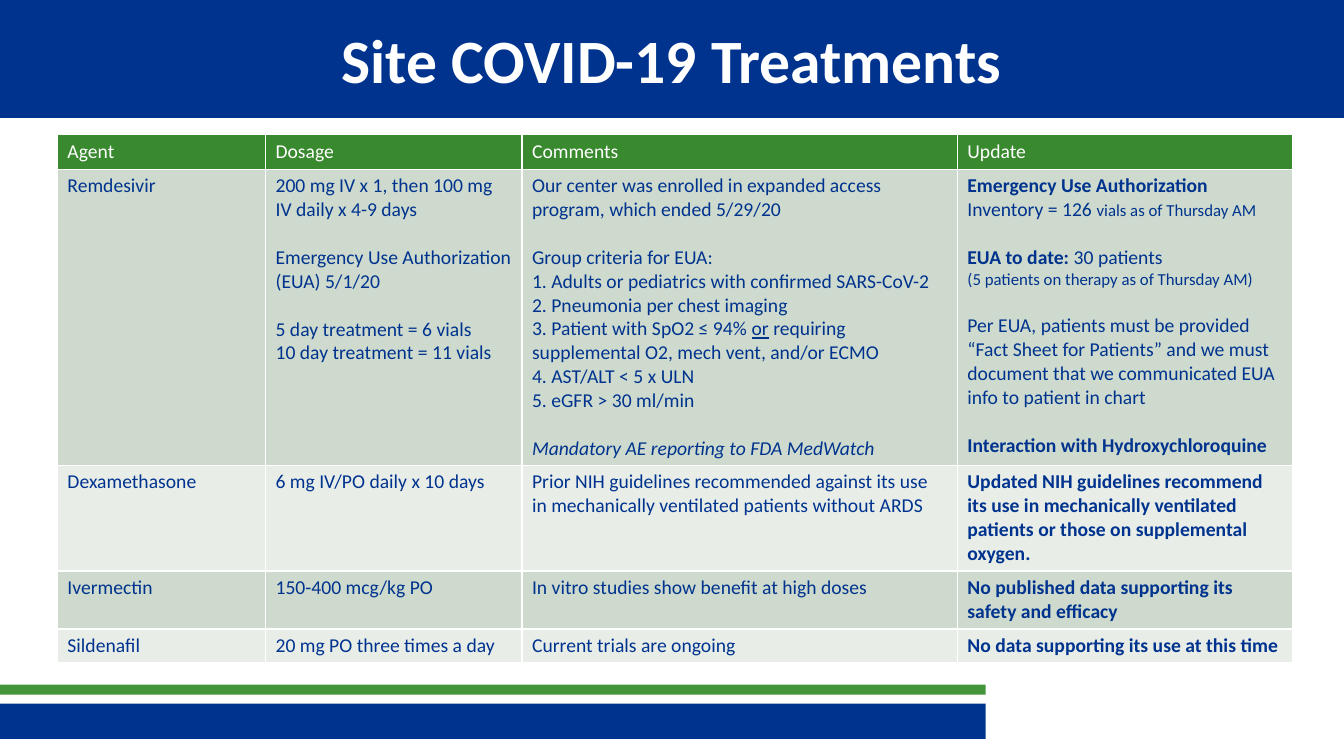
from dataclasses import dataclass

from lxml.etree import SubElement
from pptx import Presentation
from pptx.dml.color import RGBColor as Rgb
from pptx.enum.shapes import MSO_SHAPE as Shape
from pptx.enum.text import MSO_ANCHOR as Anchor, PP_ALIGN as Align
from pptx.oxml.ns import qn
from pptx.util import Pt

FONT = "Calibri"
HUES = {
    "blue": "00338E",
    "green": "439539",
    "head": "39892F",
    "dark": "CEDACD",
    "light": "E8EDE8",
    "white": "FFFFFF",
}


@dataclass
class Bar:
    left: float
    top: float
    width: float
    height: float
    hue: str


@dataclass
class Bit:
    text: str
    size: float = 14
    bold: bool = False
    slant: bool = False
    under: bool = False


@dataclass
class Para:
    bits: list[Bit]
    gap: float = 0


@dataclass
class Row:
    cells: list[list[Para]]
    height: float
    fill: str
    ink: str = "blue"


def line(text: str, gap: float = 0, size: float = 14, bold: bool = False,
         slant: bool = False) -> Para:
    return Para([Bit(text, size, bold, slant)], gap)


def plain(*texts: str) -> list[list[Para]]:
    return [[line(text)] for text in texts]


def drug(name: str, dose: str, note: str, news: str) -> list[list[Para]]:
    return plain(name, dose, note) + [[line(news, bold=True)]]


GAP = 17.1
BARS = [
    Bar(0, 502.6, 704, 25.2, "blue"),
    Bar(0, 489, 704, 7.2, "green"),
    Bar(0, 0, 960, 84.2, "blue"),
]
COLS = [148.7, 183.2, 311, 239.8]

DOSE = [
    line("200 mg IV x 1, then 100 mg IV daily x 4-9 days"),
    line("Emergency Use Authorization (EUA) 5/1/20", GAP),
    line("5 day treatment = 6 vials", GAP),
    line("10 day treatment = 11 vials"),
]
NOTES = [
    line("Our center was enrolled in expanded access program, which ended 5/29/20"),
    line("Group criteria for EUA:", GAP),
    line("1. Adults or pediatrics with confirmed SARS-CoV-2"),
    line("2. Pneumonia per chest imaging"),
    Para([
        Bit("3. Patient with SpO2 ≤ 94% "),
        Bit("or", under=True),
        Bit(" requiring supplemental O2, mech vent, and/or ECMO"),
    ]),
    line("4. AST/ALT < 5 x ULN"),
    line("5. eGFR > 30 ml/min"),
    line("Mandatory AE reporting to FDA MedWatch", GAP, slant=True),
]
NEWS = [
    line("Emergency Use Authorization", bold=True),
    Para([Bit("Inventory = 126 "), Bit("vials as of Thursday AM", 12)]),
    Para([Bit("EUA to date: ", bold=True), Bit("30 patients")], GAP),
    line("(5 patients on therapy as of Thursday AM)", size=12),
    line("Per EUA, patients must be provided “Fact Sheet for Patients” and we must "
         "document that we communicated EUA info to patient in chart", GAP),
    line("Interaction with Hydroxychloroquine", GAP, bold=True),
]
ROWS = [
    Row(plain("Agent", "Dosage", "Comments", "Update"), 24.8, "head", "white"),
    Row([[line("Remdesivir")], DOSE, NOTES, NEWS], 211.5, "dark"),
    Row(drug("Dexamethasone", "6 mg IV/PO daily x 10 days",
             "Prior NIH guidelines recommended against its use in mechanically "
             "ventilated patients without ARDS",
             "Updated NIH guidelines recommend its use in mechanically ventilated "
             "patients or those on supplemental oxygen."), 75.6, "light"),
    Row(drug("Ivermectin", "150-400 mcg/kg PO",
             "In vitro studies show benefit at high doses",
             "No published data supporting its safety and efficacy"), 41.4, "dark"),
    Row(drug("Sildenafil", "20 mg PO three times a day",
             "Current trials are ongoing",
             "No data supporting its use at this time"), 24.2, "light"),
]


def tint(name: str) -> Rgb:
    return Rgb.from_string(HUES[name])


def draw_bar(slide, bar: Bar) -> None:
    shape = slide.shapes.add_shape(Shape.RECTANGLE, Pt(bar.left), Pt(bar.top),
                                   Pt(bar.width), Pt(bar.height))
    shape.shadow.inherit = False
    shape.fill.solid()
    shape.fill.fore_color.rgb = tint(bar.hue)
    shape.line.fill.background()


def write(frame, paras: list[Para], ink: str) -> None:
    for spot, para in enumerate(paras):
        item = frame.add_paragraph() if spot else frame.paragraphs[0]
        if para.gap:
            item.space_before = Pt(para.gap)
        for bit in para.bits:
            run = item.add_run()
            run.text = bit.text
            font = run.font
            font.name = FONT
            font.size = Pt(bit.size)
            font.bold = bit.bold
            font.italic = bit.slant
            font.underline = bit.under
            font.color.rgb = tint(ink)


def draw_title(slide) -> None:
    box = slide.shapes.add_textbox(Pt(48), Pt(9), Pt(864), Pt(66))
    frame = box.text_frame
    frame.word_wrap = True
    frame.vertical_anchor = Anchor.MIDDLE
    write(frame, [line("Site COVID-19 Treatments", size=44, bold=True)], "white")
    frame.paragraphs[0].alignment = Align.CENTER


def edge(cell) -> None:
    props = cell._tc.get_or_add_tcPr()
    for side in "LRTB":
        rule = SubElement(props, qn(f"a:ln{side}"), w=str(Pt(1)))
        fill = SubElement(rule, qn("a:solidFill"))
        SubElement(fill, qn("a:srgbClr"), val=HUES["white"])


def draw_table(slide) -> None:
    table = slide.shapes.add_table(
        len(ROWS), len(COLS), Pt(41), Pt(96), Pt(sum(COLS)),
        Pt(sum(row.height for row in ROWS))).table
    for col, width in zip(table.columns, COLS):
        col.width = Pt(width)
    for spot, row in enumerate(ROWS):
        table.rows[spot].height = Pt(row.height)
        for cell, paras in zip(table.rows[spot].cells, row.cells):
            edge(cell)
            cell.fill.solid()
            cell.fill.fore_color.rgb = tint(row.fill)
            write(cell.text_frame, paras, row.ink)


def main() -> None:
    deck = Presentation()
    deck.slide_width, deck.slide_height = Pt(960), Pt(540)
    slide = deck.slides.add_slide(deck.slide_layouts[6])
    for bar in BARS:
        draw_bar(slide, bar)
    draw_title(slide)
    draw_table(slide)
    deck.save("out.pptx")


if __name__ == "__main__":
    main()
